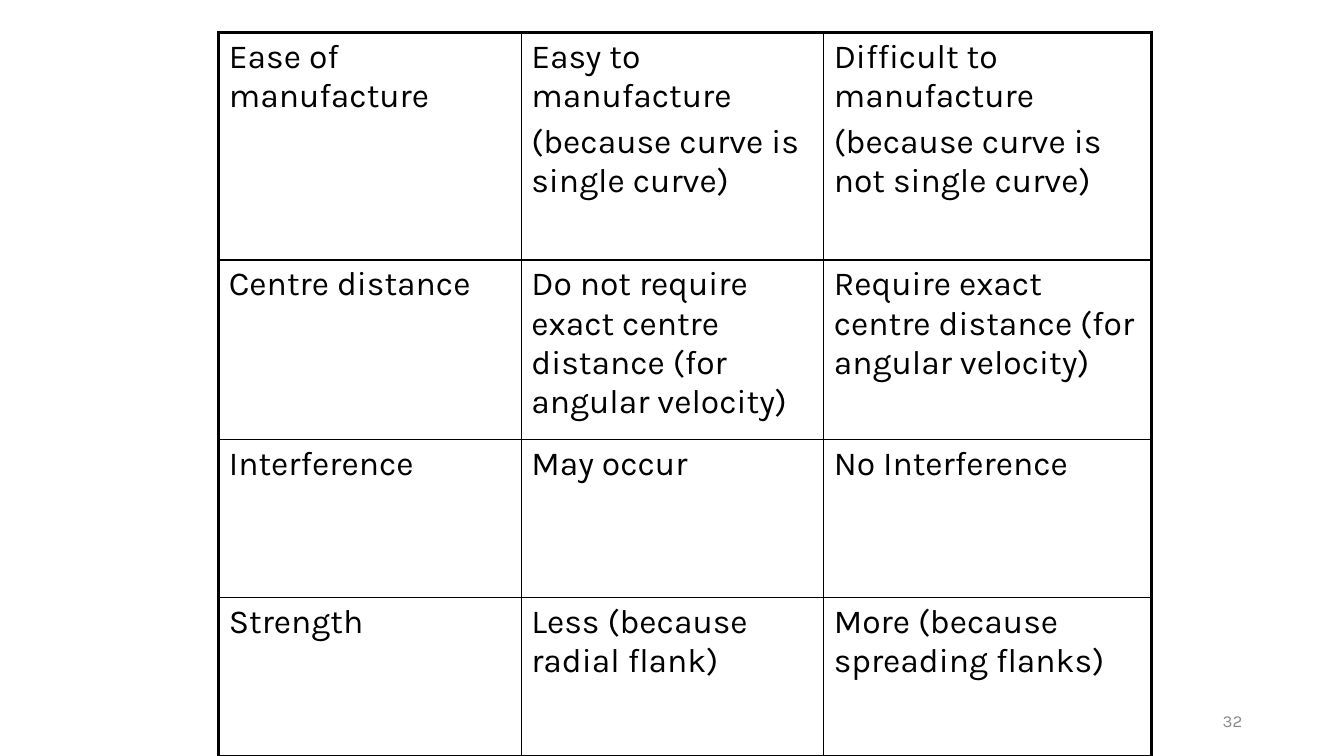
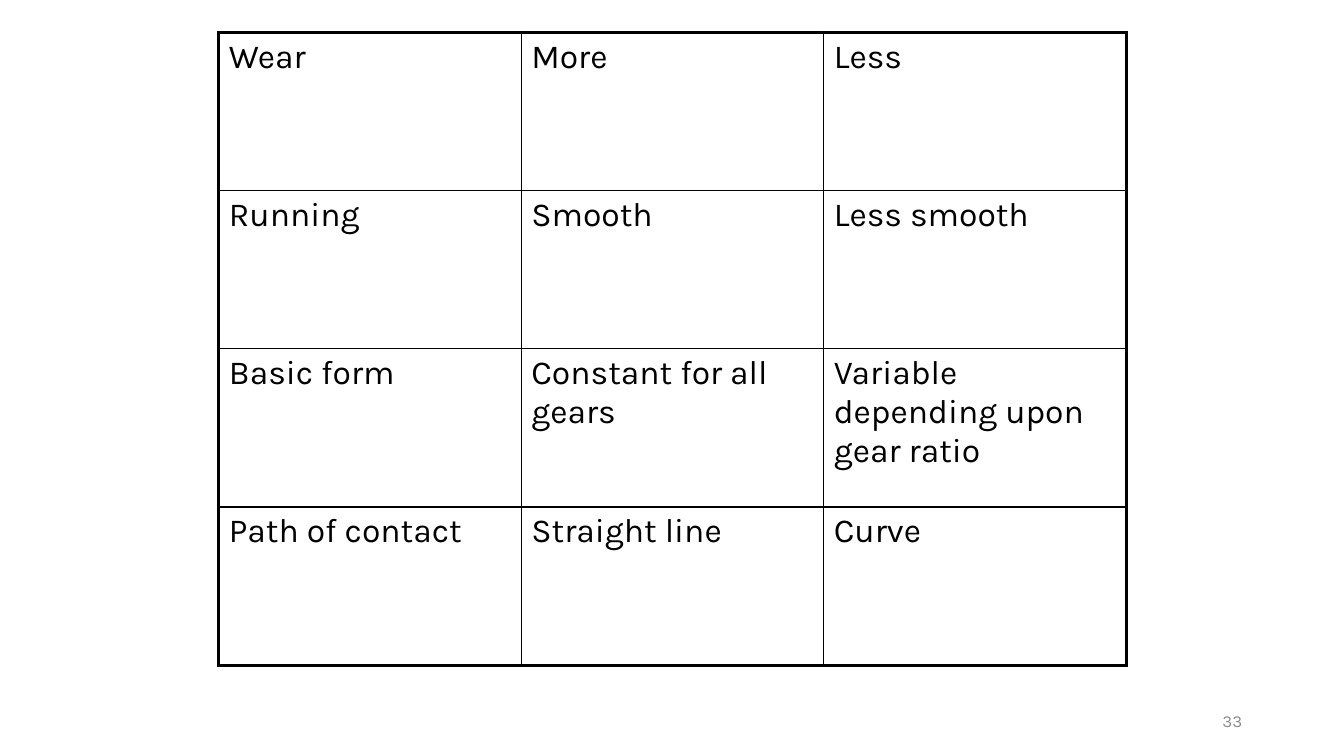
from lxml.etree import SubElement
from pptx import Presentation
from pptx.dml.color import RGBColor
from pptx.enum.text import MSO_ANCHOR, PP_ALIGN
from pptx.oxml.ns import qn
from pptx.util import Emu, Pt

# Content: each cell is a list of paragraphs separated by line breaks
SLIDES = [
    {
        "number": "32",
        "columns": [300, 300, 325],
        "heights": [226, 178, 157, 157],
        "rows": [
            ("Ease of manufacture",
             "Easy to manufacture\n(because curve is single curve)",
             "Difficult to manufacture\n(because curve is not single curve)"),
            ("Centre distance",
             "Do not require exact centre distance (for angular velocity)",
             "Require exact centre distance (for angular velocity)"),
            ("Interference", "May occur", "No Interference"),
            ("Strength", "Less (because radial flank)",
             "More (because spreading flanks)"),
        ],
    },
    {
        "number": "33",
        "columns": [300, 300, 300],
        "heights": [157, 157, 157, 157],
        "rows": [
            ("Wear", "More", "Less"),
            ("Running", "Smooth", "Less smooth"),
            ("Basic form", "Constant for all gears",
             "Variable depending upon gear ratio"),
            ("Path of contact", "Straight line", "Curve"),
        ],
    },
]

# Shared style
FONT = "Karla"
BLACK = "000000"
GREY = "898989"
TABLE_LEFT, TABLE_TOP = 217, 32
NUMBER_BOX = (942, 695, 300, 40)
OUTER_LINE, INNER_LINE = 2.25, 1


def px(value):
    return Emu(value * 9144)


def color(value):
    return RGBColor.from_string(value)


def format_runs(paragraph, size, font_color):
    for run in paragraph.runs:
        run.font.name = FONT
        run.font.size = Pt(size)
        run.font.color.rgb = color(font_color)


def set_border(cell, side, width):
    properties = cell._tc.get_or_add_tcPr()
    line = SubElement(properties, qn(f"a:{side}"), w=str(Pt(width)))
    fill = SubElement(line, qn("a:solidFill"))
    SubElement(fill, qn("a:srgbClr"), val=BLACK)


def add_comparison_table(slide, rows, columns, heights):
    frame = slide.shapes.add_table(
        len(rows), len(columns), px(TABLE_LEFT), px(TABLE_TOP),
        px(sum(columns)), px(sum(heights)))
    table = frame.table
    table.first_row = table.horz_banding = False
    for column, width in zip(table.columns, columns):
        column.width = px(width)
    for row, height in zip(table.rows, heights):
        row.height = px(height)

    for row_index, texts in enumerate(rows):
        for column_index, text in enumerate(texts):
            cell = table.cell(row_index, column_index)
            cell.text_frame.text = text
            for index, paragraph in enumerate(cell.text_frame.paragraphs):
                paragraph.space_before = Pt(4.8 if index else 0)
                format_runs(paragraph, 24, BLACK)
            # Thick frame around the table, thin lines inside
            on_edge = {
                "lnL": column_index == 0,
                "lnR": column_index == len(columns) - 1,
                "lnT": row_index == 0,
                "lnB": row_index == len(rows) - 1,
            }
            for side, outer in on_edge.items():
                set_border(cell, side, OUTER_LINE if outer else INNER_LINE)
            cell.fill.background()


def add_slide_number(slide, number):
    box = slide.shapes.add_textbox(*map(px, NUMBER_BOX))
    text_frame = box.text_frame
    text_frame.word_wrap = True
    text_frame.vertical_anchor = MSO_ANCHOR.MIDDLE
    text_frame.text = number
    paragraph = text_frame.paragraphs[0]
    paragraph.alignment = PP_ALIGN.RIGHT
    format_runs(paragraph, 12, GREY)


def main():
    presentation = Presentation()
    presentation.slide_width, presentation.slide_height = px(1333), px(750)
    for content in SLIDES:
        slide = presentation.slides.add_slide(presentation.slide_layouts[6])
        add_comparison_table(slide, content["rows"], content["columns"],
                             content["heights"])
        add_slide_number(slide, content["number"])
    presentation.save("out.pptx")


if __name__ == "__main__":
    main()
